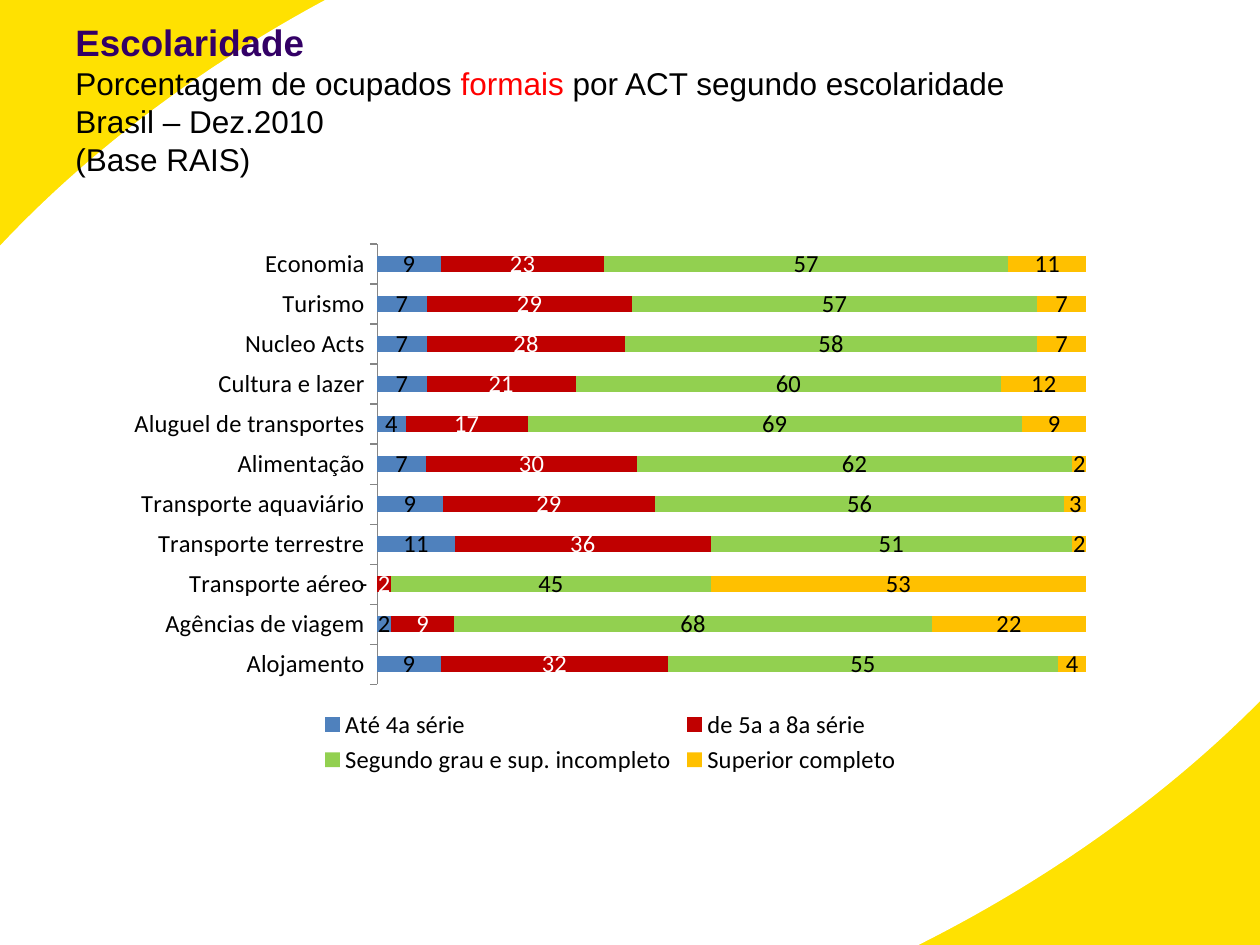
from pptx import Presentation
from pptx import util as u
from pptx.chart import data as chart_data
from pptx.dml.color import RGBColor
from pptx.enum import chart as charts, shapes, text

COLORS = {
    "yellow": "FFE101", "white": "FFFFFF", "purple": "330066",
    "black": "000000", "red": "FF0000", "axis": "868686",
}
NUMBER_FORMAT = '_-* #,##0_-;\\-* #,##0_-;_-* "-"??_-;_-@_'


def rgb(name):
    return RGBColor.from_string(COLORS[name])


deck = Presentation()
deck.slide_width, deck.slide_height = u.Inches(10), u.Inches(7.5)
page = deck.slides.add_slide(deck.slide_layouts[6])
page.background.fill.solid()
page.background.fill.fore_color.rgb = rgb("yellow")

band = page.shapes.add_shape(
    shapes.MSO_SHAPE.OVAL, u.Inches(-2.01), u.Inches(-0.73), u.Inches(14.18), u.Inches(8.81))
band.rotation = 335.5
band.shadow.inherit = False
band.fill.solid()
band.fill.fore_color.rgb = rgb("white")
band.line.fill.background()

title_lines = [
    (21, True, [("Escolaridade", "purple")]),
    (18, False, [("Porcentagem de ocupados ", "black"), ("formais ", "red"),
                 ("por ACT segundo escolaridade", "black")]),
    (18, False, [("Brasil – Dez.2010", "black")]),
    (18, False, [("(Base RAIS)", "black")]),
]
title = page.shapes.add_textbox(u.Inches(0.5), u.Inches(0.13), u.Inches(8.25), u.Inches(1.33))
frame = title.text_frame
frame.word_wrap = True
frame.vertical_anchor = text.MSO_ANCHOR.BOTTOM
for index, (size, bold, spans) in enumerate(title_lines):
    para = frame.add_paragraph() if index else frame.paragraphs[0]
    para.font.name, para.font.size, para.font.bold = "Arial", u.Pt(size), bold
    for words, color in spans:
        span = para.add_run()
        span.text = words
        span.font.color.rgb = rgb(color)

series_rows = [
    ("Até 4a série", "4F81BD", "black", [9, 2, 0, 11, 9, 7, 4, 7, 7, 7, 9]),
    ("de 5a a 8a série", "C00000", "white", [32, 9, 2, 36, 29, 30, 17, 21, 28, 29, 23]),
    ("Segundo grau e sup. incompleto", "92D050", "black",
     [55, 68, 45, 51, 56, 62, 69, 60, 58, 57, 57]),
    ("Superior completo", "FFC000", "black", [4, 22, 53, 2, 3, 2, 9, 12, 7, 7, 11]),
]
schooling = chart_data.CategoryChartData(number_format=NUMBER_FORMAT)
schooling.categories = [
    "Alojamento", "Agências de viagem", "Transporte aéreo", "Transporte terrestre",
    "Transporte aquaviário", "Alimentação", "Aluguel de transportes", "Cultura e lazer",
    "Nucleo Acts", "Turismo", "Economia",
]
for name, fill, label_color, values in series_rows:
    schooling.add_series(name, values)

chart = page.shapes.add_chart(
    charts.XL_CHART_TYPE.BAR_STACKED_100, u.Inches(0.91), u.Inches(1.85),
    u.Inches(7.87), u.Inches(4.34), schooling).chart
chart.has_title = False
chart.font.name, chart.font.size = "Calibri", u.Pt(14)
chart.font.color.rgb = rgb("black")
chart.has_legend = True
chart.legend.position = charts.XL_LEGEND_POSITION.BOTTOM
chart.legend.include_in_layout = False
chart.legend.font.size = u.Pt(14)

chart.value_axis.visible = False
chart.value_axis.has_major_gridlines = False
categories = chart.category_axis
categories.major_tick_mark = charts.XL_TICK_MARK.OUTSIDE
categories.tick_labels.font.size = u.Pt(14)
categories.format.line.color.rgb = rgb("axis")
categories.format.line.width = u.Pt(0.75)

plot = chart.plots[0]
plot.gap_width, plot.overlap = 150, 100
plot.vary_by_categories = False
for series, (name, fill, label_color, values) in zip(plot.series, series_rows):
    series.format.fill.solid()
    series.format.fill.fore_color.rgb = RGBColor.from_string(fill)
    labels = series.data_labels
    labels.show_value = True
    labels.number_format = NUMBER_FORMAT
    labels.number_format_is_linked = False
    labels.font.size = u.Pt(14)
    labels.font.color.rgb = rgb(label_color)

deck.save("out.pptx")
